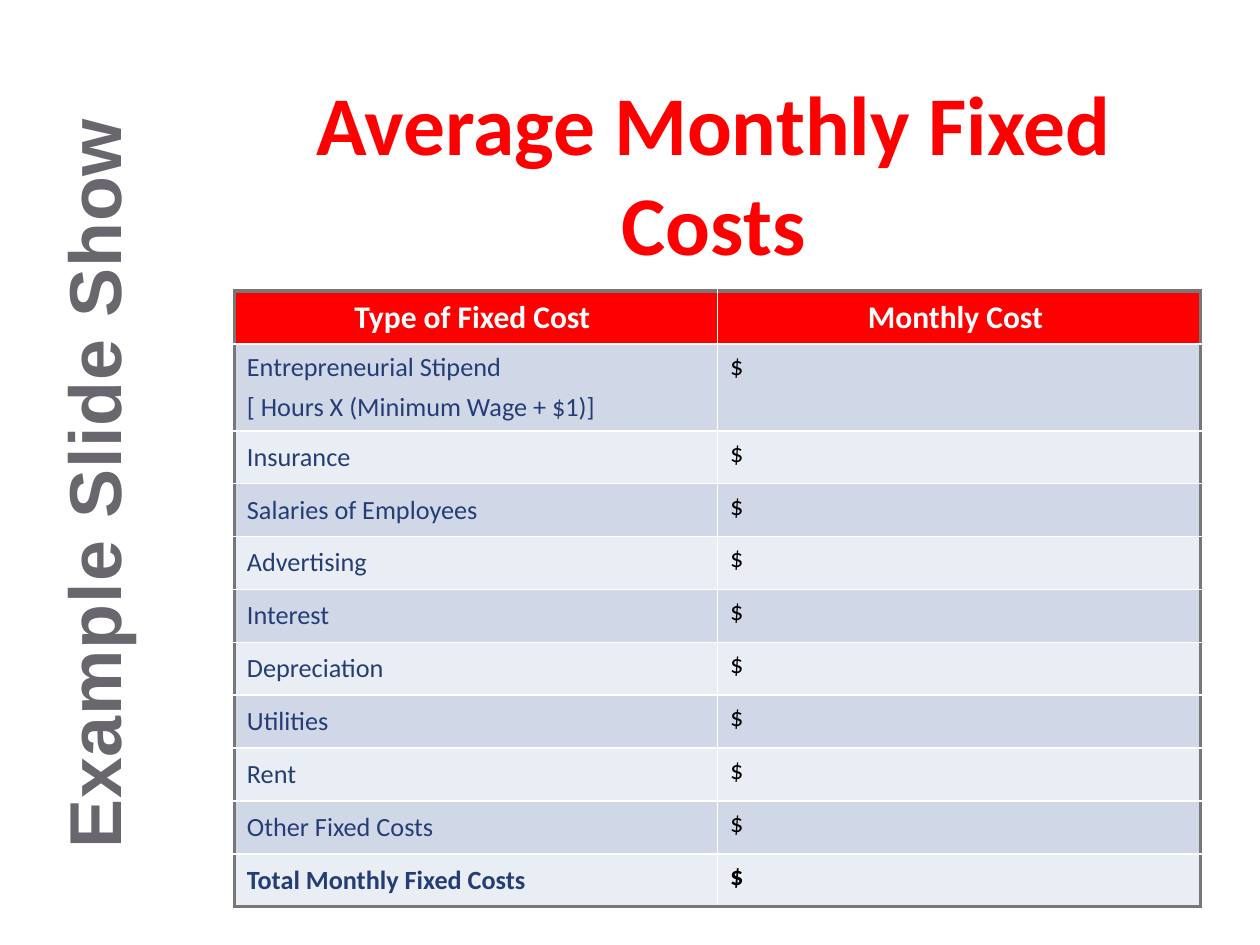
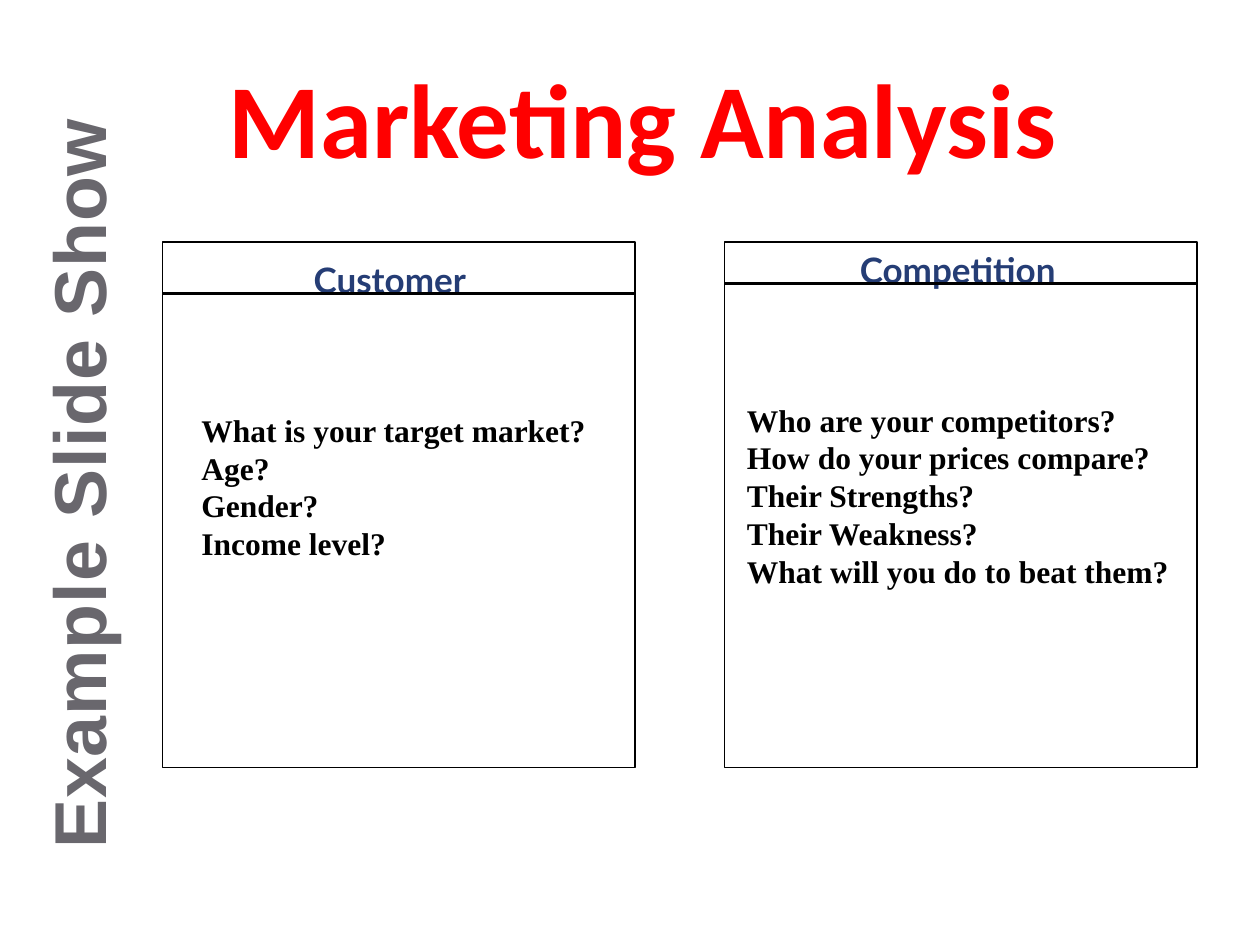
from lxml import etree
from pptx import Presentation
from pptx import util as u
from pptx.dml.color import RGBColor
from pptx.enum import shapes, text
from pptx.oxml.ns import qn

COLORS = {
    "title": "FF0000",
    "label": "253D75",
    "ink": "000000",
    "side": "69676D",
    "white": "FFFFFF",
    "frame": "777777",
    "dark_band": "D0D8E8",
    "light_band": "E9EDF4",
}
CENTER = text.PP_ALIGN.CENTER
TOP, MIDDLE = text.MSO_ANCHOR.TOP, text.MSO_ANCHOR.MIDDLE

FIXED_COSTS = [
    ["Entrepreneurial Stipend", "[ Hours X (Minimum Wage + $1)]"],
    ["Insurance"],
    ["Salaries of Employees"],
    ["Advertising"],
    ["Interest"],
    ["Depreciation"],
    ["Utilities"],
    ["Rent"],
    ["Other Fixed Costs"],
    ["Total Monthly Fixed Costs"],
]
CUSTOMER_QUESTIONS = [
    "What is your target market?", "Age?", "Gender?", "Income level?",
]
COMPETITION_QUESTIONS = [
    "Who are your competitors?", "How do your prices compare?",
    "Their Strengths?", "Their Weakness?", "What will you do to beat them?",
]


def rgb(name):
    return RGBColor.from_string(COLORS[name])


def inches(*lengths):
    return [u.Inches(length) for length in lengths]


def write(frame, lines, size, color, font="Calibri", bold=True, align=None,
          before=0, spacing=0):
    for i, line in enumerate(lines):
        paragraph = frame.paragraphs[0] if i == 0 else frame.add_paragraph()
        paragraph.alignment = align
        paragraph.space_before = u.Pt(before)
        run = paragraph.add_run()
        run.text = line
        run.font.name = font
        run.font.size = u.Pt(size)
        run.font.bold = bold
        run.font.color.rgb = rgb(color)
        if spacing:
            run.font._element.set("spc", str(int(spacing * 100)))


def add_text(parent, box, lines, anchor=TOP, inset_top=0.05, wrap=True,
             rotation=0, **style):
    label = parent.add_textbox(*inches(*box))
    label.rotation = rotation
    frame = label.text_frame
    frame.word_wrap = wrap
    frame.vertical_anchor = anchor
    frame.margin_top = u.Inches(inset_top)
    write(frame, lines, **style)


def add_title(slide, box, title, size, **layout):
    add_text(slide.shapes, box, [title], size=size, color="title",
             align=CENTER, **layout)


def add_side_label(slide, center_x):
    width, height = 6.32, 0.81
    add_text(slide.shapes, (center_x - width / 2, 3.35, width, height),
             ["Example Slide Show "], wrap=False, rotation=270, size=42,
             color="side", font="Arial", align=CENTER, spacing=0.5)


def set_borders(cell, edges):
    properties = cell._tc.get_or_add_tcPr()
    for position, (side, outer) in enumerate(edges.items()):
        color, width = ("frame", 2.25) if outer else ("white", 1)
        line = etree.Element(qn(f"a:ln{side}"), w=str(u.Pt(width)))
        fill = etree.SubElement(line, qn("a:solidFill"))
        etree.SubElement(fill, qn("a:srgbClr"), val=COLORS[color])
        properties.insert(position, line)


def add_cost_table(slide, box):
    left, top, width, height = box
    row_count = len(FIXED_COSTS) + 1
    stipend_height = 0.69
    row_height = (height - stipend_height) / (row_count - 1)
    table = slide.shapes.add_table(row_count, 2, *inches(*box)).table
    for column in table.columns:
        column.width = u.Inches(width / 2)
    rows = [(["Type of Fixed Cost "], ["Monthly Cost "])]
    rows += [(cost, ["$"]) for cost in FIXED_COSTS]
    last = row_count - 1
    for r, row in enumerate(rows):
        table.rows[r].height = u.Inches(stipend_height if r == 1 else row_height)
        for c, lines in enumerate(row):
            cell = table.cell(r, c)
            if r == 0:
                band = "title"
                style = dict(size=18, color="white", align=CENTER, before=6.8)
            else:
                band = "dark_band" if r % 2 else "light_band"
                style = dict(size=15, color="ink" if c else "label",
                             bold=r == last, before=4.8)
            cell.vertical_anchor = TOP if r and c else MIDDLE
            cell.fill.solid()
            cell.fill.fore_color.rgb = rgb(band)
            write(cell.text_frame, lines, **style)
            set_borders(cell, {"L": c == 0, "R": c == 1,
                               "T": r == 0, "B": r == last})


def add_card(slide, box, heading, heading_offset, rule_offset):
    left, top, width, height = box
    card = slide.shapes.add_group_shape().shapes
    outline = card.add_shape(shapes.MSO_SHAPE.RECTANGLE, *inches(*box))
    outline.shadow.inherit = False
    outline.fill.background()
    outline.line.color.rgb = rgb("ink")
    outline.line.width = u.Pt(0.75)
    dx, dy = heading_offset
    add_text(card, (left + dx, top + dy, 2.83, 0.43), [heading],
             size=20, color="label", font="Lato", align=CENTER)
    rule_y = top + rule_offset
    rule = card.add_connector(shapes.MSO_CONNECTOR.STRAIGHT,
                              *inches(left, rule_y, left + width, rule_y))
    rule.line.color.rgb = rgb("ink")
    rule.line.width = u.Pt(2)
    etree.SubElement(rule._element.spPr, qn("a:effectLst"))


def add_questions(slide, box, questions):
    add_text(slide.shapes, box, questions, inset_top=0.1, size=18,
             color="ink", font="Times New Roman")


def build_fixed_costs(slide):
    add_title(slide, (1.83, 0.3, 7.67, 1.45), "Average Monthly Fixed Costs",
              47.7, inset_top=0.27)
    add_cost_table(slide, (1.86, 2.31, 7.67, 4.89))
    add_side_label(slide, 0.74)


def build_marketing(slide):
    add_title(slide, (0.6, 0.3, 9, 1.25), "Marketing Analysis", 60,
              anchor=MIDDLE)
    add_questions(slide, (1.5, 3.16, 3.75, 1.92), CUSTOMER_QUESTIONS)
    add_card(slide, (1.29, 1.92, 3.75, 4.17), "Customer ", (0.42, 0.08), 0.41)
    add_card(slide, (5.75, 1.92, 3.75, 4.17), "Competition ", (0.47, 0), 0.33)
    add_questions(slide, (5.83, 3.08, 3.75, 2.83), COMPETITION_QUESTIONS)
    add_side_label(slide, 0.62)


def main():
    deck = Presentation()
    deck.slide_width, deck.slide_height = inches(10, 7.5)
    for build in (build_fixed_costs, build_marketing):
        build(deck.slides.add_slide(deck.slide_layouts[6]))
    deck.save("out.pptx")


if __name__ == "__main__":
    main()
